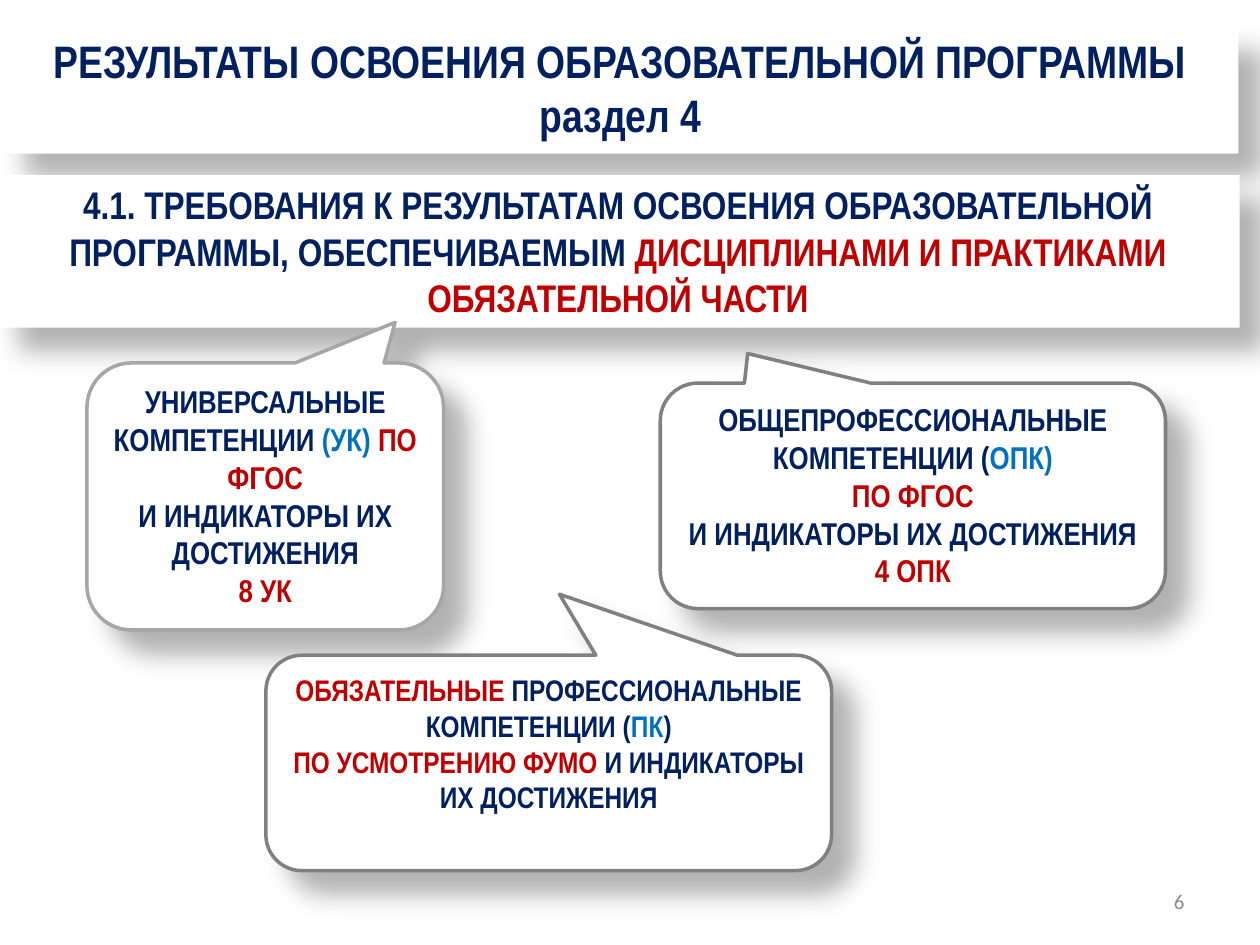
from lxml import etree
from pptx import Presentation
from pptx.dml.color import RGBColor
from pptx.enum.shapes import MSO_SHAPE as Shape
from pptx.enum.text import MSO_ANCHOR as Anchor, MSO_AUTO_SIZE as Fit, PP_ALIGN as Align
from pptx.oxml.ns import qn
from pptx.util import Pt

HUES = {
    "white": "FFFFFF",
    "black": "000000",
    "navy": "002060",
    "red": "C00000",
    "blue": "0070C0",
    "pale": "A6A6A6",
    "gray": "808080",
    "page": "8C8C8C",
}


def hue(name):
    return RGBColor.from_string(HUES[name])


def write(frame, paras, size=18, font="Arial Narrow", bold=True,
          align=Align.CENTER, anchor=Anchor.TOP, fit=Fit.SHAPE_TO_FIT_TEXT):
    frame.word_wrap = True
    frame.auto_size = fit
    frame.vertical_anchor = anchor
    for i, runs in enumerate(paras):
        para = frame.paragraphs[0] if i == 0 else frame.add_paragraph()
        para.alignment = align
        for words, tone in runs:
            run = para.add_run()
            run.text = words
            run.font.name = font
            run.font.size = Pt(size)
            run.font.bold = bold
            run.font.color.rgb = hue(tone)


def shade(shape):
    shape.shadow.inherit = False
    list_el = shape._element.spPr.find(qn("a:effectLst"))
    outer = etree.SubElement(list_el, qn("a:outerShdw"), blurRad=str(Pt(15)),
                             dist=str(Pt(18)), dir="2700000", algn="tl",
                             rotWithShape="0")
    tint = etree.SubElement(outer, qn("a:srgbClr"), val=HUES["black"])
    etree.SubElement(tint, qn("a:alpha"), val="30000")


def panel(slide, kind, box):
    shape = slide.shapes.add_shape(kind, *map(Pt, box))
    shape.fill.solid()
    shape.fill.fore_color.rgb = hue("white")
    shade(shape)
    return shape


def band(slide, box, paras, size):
    shape = panel(slide, Shape.RECTANGLE, box)
    shape.line.fill.background()
    write(shape.text_frame, paras, size=size)


def callout(slide, box, tip, paras, edge="gray", size=18, foot=3.6):
    shape = panel(slide, Shape.ROUNDED_RECTANGULAR_CALLOUT, box)
    for i, value in enumerate((*tip, 0.167)):
        shape.adjustments[i] = value
    shape.line.color.rgb = hue(edge)
    shape.line.width = Pt(2)
    shape.text_frame.margin_bottom = Pt(foot)
    write(shape.text_frame, paras, size=size)


def number(slide, box, words):
    label = slide.shapes.add_textbox(*map(Pt, box))
    write(label.text_frame, [[(words, "page")]], size=12, font="Calibri",
          bold=False, align=Align.RIGHT, anchor=Anchor.MIDDLE, fit=Fit.NONE)


def main():
    deck = Presentation()
    deck.slide_width, deck.slide_height = Pt(720), Pt(540)
    slide = deck.slides.add_slide(deck.slide_layouts[6])

    number(slide, (516.2, 500.4, 167.8, 28.8), "6")
    band(slide, (1.4, 15.1, 706.3, 72.7), [
        [("РЕЗУЛЬТАТЫ ОСВОЕНИЯ ОБРАЗОВАТЕЛЬНОЙ ПРОГРАММЫ", "navy")],
        [("раздел 4", "navy")],
    ], 26)
    band(slide, (-2.2, 100.1, 710.6, 87.1), [
        [("4.1. ТРЕБОВАНИЯ К РЕЗУЛЬТАТАМ ОСВОЕНИЯ ОБРАЗОВАТЕЛЬНОЙ "
          "ПРОГРАММЫ, ОБЕСПЕЧИВАЕМЫМ ", "navy"),
         ("ДИСЦИПЛИНАМИ И ПРАКТИКАМИ ОБЯЗАТЕЛЬНОЙ ЧАСТИ", "red")],
    ], 22)
    callout(slide, (49.7, 207.4, 203.8, 152.6), (0.364, -0.652), [
        [("УНИВЕРСАЛЬНЫЕ КОМПЕТЕНЦИИ ", "navy"), ("(УК) ", "blue"),
         ("ПО ФГОС", "red")],
        [("И ИНДИКАТОРЫ ИХ ДОСТИЖЕНИЯ", "navy")],
        [("8 УК", "red")],
    ], edge="pale")
    callout(slide, (377.3, 218.9, 288.7, 128.9), (-0.327, -0.631), [
        [("ОБЩЕПРОФЕССИОНАЛЬНЫЕ КОМПЕТЕНЦИИ (", "navy"), ("ОПК)", "blue")],
        [("ПО ФГОС", "red")],
        [("И ИНДИКАТОРЫ ИХ ДОСТИЖЕНИЯ", "navy")],
        [("4 ОПК", "red")],
    ])
    callout(slide, (151.9, 374.4, 323.3, 123.1), (0.019, -0.783), [
        [("ОБЯЗАТЕЛЬНЫЕ ", "red"), ("ПРОФЕССИОНАЛЬНЫЕ КОМПЕТЕНЦИИ (", "navy"),
         ("ПК", "blue"), (")", "navy")],
        [("ПО УСМОТРЕНИЮ ФУМО ", "red"),
         ("И ИНДИКАТОРЫ ИХ ДОСТИЖЕНИЯ", "navy")],
    ], size=17, foot=25)

    deck.save("out.pptx")


if __name__ == "__main__":
    main()
